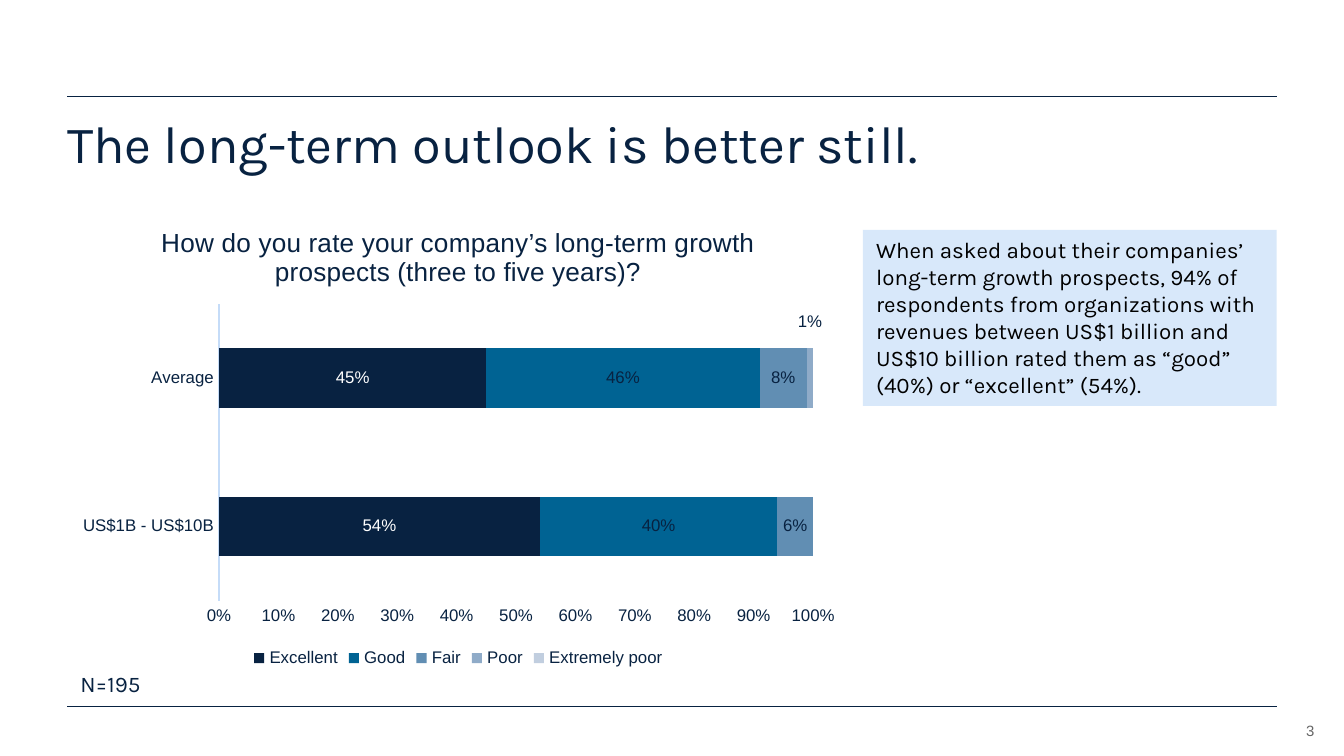
from lxml import etree
from pptx import Presentation
from pptx.chart.data import CategoryChartData
from pptx.dml.color import RGBColor
from pptx.enum.chart import XL_CHART_TYPE, XL_LABEL_POSITION, XL_LEGEND_POSITION, XL_TICK_MARK
from pptx.enum.shapes import MSO_CONNECTOR, MSO_SHAPE
from pptx.enum.text import MSO_ANCHOR, PP_ALIGN
from pptx.oxml import parse_xml
from pptx.oxml.ns import nsdecls, qn
from pptx.util import Inches, Pt

COLORS = {
    "navy": "082241", "white": "FFFFFF", "black": "000000", "grey": "666666",
    "callout": "D8E8FA", "axis": "C5DCF8", "good": "006393", "fair": "618EB3",
    "poor": "8FABC8", "extremely_poor": "C1CEDF",
}
RATINGS = [
    ("Excellent", (0.54, 0.45), "navy", "white"),
    ("Good", (0.40, 0.46), "good", "navy"),
    ("Fair", (0.06, 0.08), "fair", "navy"),
    ("Poor", (None, 0.01), "poor", "navy"),
    ("Extremely poor", (None, None), "extremely_poor", "navy"),
]
LEFT, WIDTH = 0.5, 9


def rgb(name):
    return RGBColor.from_string(COLORS[name])


def style_font(font, face, size, color):
    font.name = face
    font.size = Pt(size)
    font.color.rgb = rgb(color)
    font.bold = False


def write(frame, text, face, size, color, inset=True):
    frame.word_wrap = True
    frame.vertical_anchor = MSO_ANCHOR.TOP
    if not inset:
        frame.margin_left = frame.margin_right = 0
        frame.margin_top = frame.margin_bottom = 0
    frame.text = text
    paragraph = frame.paragraphs[0]
    paragraph.alignment = PP_ALIGN.LEFT
    style_font(paragraph.runs[0].font, face, size, color)
    return paragraph


def add_rule(slide, left, top, width):
    rule = slide.shapes.add_connector(
        MSO_CONNECTOR.STRAIGHT, Inches(left), Inches(top), Inches(left + width), Inches(top))
    rule.line.color.rgb = rgb("navy")
    rule.line.width = Pt(0.5)
    etree.SubElement(rule._element.spPr, qn("a:effectLst"))


def place_title(slide, left, top, width, height):
    title = slide.shapes.title
    title.left, title.top = Inches(left), Inches(top)
    title.width, title.height = Inches(width), Inches(height)
    heading = write(title.text_frame, "The long-term outlook is better still.",
                    "Karla", 28, "navy", inset=False)
    heading.line_spacing = 0.9


def add_callout(slide, left, top, width, height):
    callout = slide.shapes.add_shape(
        MSO_SHAPE.RECTANGLE, Inches(left), Inches(top), Inches(width), Inches(height))
    callout.shadow.inherit = False
    callout.fill.solid()
    callout.fill.fore_color.rgb = rgb("callout")
    callout.line.fill.background()
    write(callout.text_frame,
          "When asked about their companies’ long-term growth prospects, 94% of respondents "
          "from organizations with revenues between US$1 billion and US$10 billion rated them "
          "as “good” (40%) or “excellent” (54%).", "Karla", 12, "black")


def add_note(slide, left, top, width, height):
    note = slide.shapes.add_textbox(Inches(left), Inches(top), Inches(width), Inches(height))
    write(note.text_frame, "N=195", "Karla", 12, "navy")


def add_page_number(slide, left, top, width, height):
    number = slide.shapes.add_textbox(Inches(left), Inches(top), Inches(width), Inches(height))
    paragraph = write(number.text_frame, "3", "Arial", 8, "grey", inset=False)
    paragraph.alignment = PP_ALIGN.RIGHT
    number.text_frame.vertical_anchor = MSO_ANCHOR.BOTTOM


def manual_layout(**settings):
    entries = "".join(f'<c:{key} val="{value}"/>' for key, value in settings.items())
    return parse_xml(
        f'<c:layout {nsdecls("c")}><c:manualLayout>{entries}</c:manualLayout></c:layout>')


def style_axis(axis):
    axis.has_major_gridlines = False
    axis.major_tick_mark = axis.minor_tick_mark = XL_TICK_MARK.NONE
    style_font(axis.tick_labels.font, "Arial", 9, "navy")


def style_series(series, fill, label_color):
    series.format.fill.solid()
    series.format.fill.fore_color.rgb = rgb(fill)
    labels = series.data_labels
    labels.show_value = True
    labels.number_format = "0%"
    labels.number_format_is_linked = False
    labels.position = XL_LABEL_POSITION.CENTER
    style_font(labels.font, "Arial", 9, label_color)
    for leader in series._element.iter(qn("c:showLeaderLines")):
        leader.set("val", "0")


def raise_label(series, index, offset):
    label = series.points[index].data_label
    style_font(label.font, "Arial", 9, "navy")
    label.position = XL_LABEL_POSITION.CENTER
    element = series._element.find(f'{qn("c:dLbls")}/{qn("c:dLbl")}')
    element.insert(1, manual_layout(x=0, y=-offset))


def add_outlook_chart(slide, left, top, width, height):
    data = CategoryChartData(number_format="0%")
    data.categories = ["US$1B - US$10B", "Average"]
    for name, shares, _, _ in RATINGS:
        data.add_series(name, shares)
    chart = slide.shapes.add_chart(
        XL_CHART_TYPE.BAR_STACKED_100, Inches(left), Inches(top),
        Inches(width), Inches(height), data).chart
    style_font(chart.font, "Arial", 10, "navy")

    question = chart.chart_title.text_frame
    question.text = "How do you rate your company’s long-term growth prospects (three to five years)?"
    style_font(question.paragraphs[0].runs[0].font, "Arial", 14, "navy")

    chart.has_legend = True
    chart.legend.position = XL_LEGEND_POSITION.BOTTOM
    chart.legend.include_in_layout = False
    style_font(chart.legend.font, "Arial", 9, "navy")

    style_axis(chart.category_axis)
    chart.category_axis.format.line.color.rgb = rgb("axis")
    chart.category_axis.format.line.width = Pt(0.75)
    shares_axis = chart.value_axis
    style_axis(shares_axis)
    shares_axis.format.line.fill.background()
    shares_axis.minimum_scale, shares_axis.maximum_scale = 0, 1
    shares_axis.major_unit = 0.1
    shares_axis.tick_labels.number_format = "0%"
    shares_axis.tick_labels.number_format_is_linked = False

    plot = chart.plots[0]
    plot.gap_width, plot.overlap = 150, 100
    plot.vary_by_categories = False
    for series, (_, _, fill, label_color) in zip(plot.series, RATINGS):
        style_series(series, fill, label_color)
    raise_label(plot.series[3], 1, 0.12)

    plot_area = chart._chartSpace.chart.plotArea
    for layout in plot_area.findall(qn("c:layout")):
        plot_area.remove(layout)
    plot_area.insert(0, manual_layout(
        layoutTarget="inner", xMode="edge", yMode="edge",
        x=1.13 / width, y=0.74 / height, w=4.42 / width, h=2.21 / height))


def main():
    prs = Presentation()
    prs.slide_width = Inches(10)
    prs.slide_height = prs.slide_width * 9 // 16
    slide = prs.slides.add_slide(prs.slide_layouts[5])
    for top in (0.72, 5.26):
        add_rule(slide, LEFT, top, WIDTH)
    add_page_number(slide, 9.31, 5.32, 0.47, 0.18)
    place_title(slide, LEFT, 0.88, WIDTH, 0.55)
    add_callout(slide, 6.42, 1.71, 3.08, 1.31)
    add_outlook_chart(slide, LEFT, 1.52, 5.82, 3.49)
    add_note(slide, LEFT, 4.94, 1.67, 0.3)
    prs.save("out.pptx")


if __name__ == "__main__":
    main()
